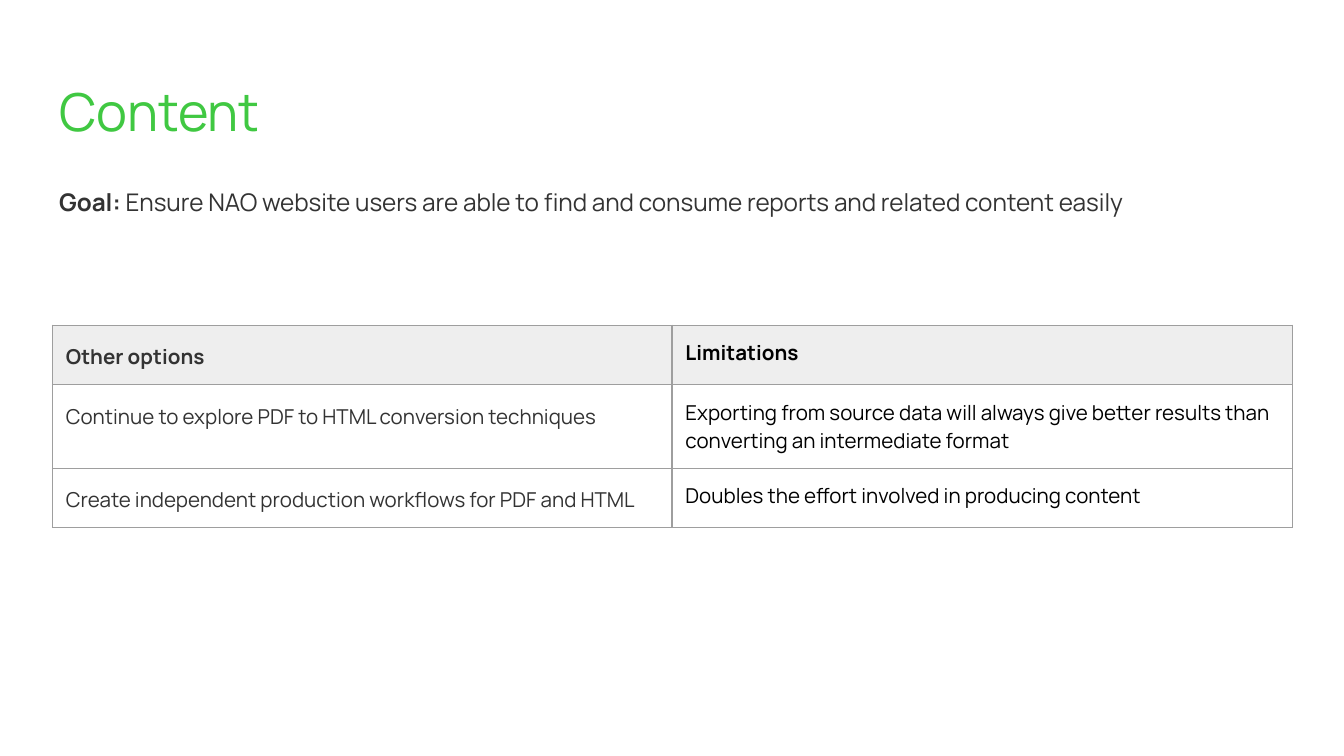
from dataclasses import dataclass

from lxml import etree
from pptx import Presentation
from pptx.dml.color import RGBColor
from pptx.enum.text import MSO_ANCHOR, MSO_AUTO_SIZE, PP_ALIGN
from pptx.oxml.ns import qn
from pptx.util import Inches, Pt

TOP = MSO_ANCHOR.TOP
LEFT = PP_ALIGN.LEFT
FIXED = MSO_AUTO_SIZE.NONE

FONT = "Manrope"
GREEN = RGBColor(0x40, 0xC8, 0x42)
DARK = RGBColor(0x33, 0x33, 0x33)
BLACK = RGBColor(0, 0, 0)
PALE = RGBColor(0xEE, 0xEE, 0xEE)
GREY = RGBColor(0x9E, 0x9E, 0x9E)
PAD = Inches(0.1)


@dataclass
class Row:
    option: str
    limit: str
    height: float


ROWS = [
    Row("Other options", "Limitations", 0.44),
    Row("Continue to explore PDF to HTML conversion techniques",
        "Exporting from source data will always give better results than "
        "converting an intermediate format", 0.62),
    Row("Create independent production workflows for PDF and HTML",
        "Doubles the effort involved in producing content", 0.44),
]
WIDTHS = (4.61, 4.62)


def style(run, size: float, color: RGBColor, bold: bool = False) -> None:
    font = run.font
    font.name, font.size, font.bold = FONT, Pt(size), bold
    font.color.rgb = color


def place(shape, top: float, height: float):
    """Move a placeholder and return its first paragraph."""
    shape.left, shape.top = Inches(0.34), Inches(top)
    shape.width, shape.height = Inches(9.32), Inches(height)
    frame = shape.text_frame
    frame.auto_size, frame.vertical_anchor = FIXED, TOP
    frame.margin_left = frame.margin_right = PAD
    frame.margin_top = frame.margin_bottom = PAD
    para = frame.paragraphs[0]
    para.alignment, para.space_before = LEFT, Pt(0)
    return para


def border(cell) -> None:
    props = cell._tc.get_or_add_tcPr()
    for index, side in enumerate(("lnL", "lnR", "lnT", "lnB")):
        line = etree.Element(qn(f"a:{side}"), w=str(Pt(0.75)))
        fill = etree.SubElement(line, qn("a:solidFill"))
        etree.SubElement(fill, qn("a:srgbClr"), val=str(GREY))
        props.insert(index, line)


def fill_cell(cell, text: str, head: bool, first: bool) -> None:
    cell.margin_left = cell.margin_right = PAD
    cell.margin_top = cell.margin_bottom = PAD
    cell.vertical_anchor = TOP
    if head:
        cell.fill.solid()
        cell.fill.fore_color.rgb = PALE
    else:
        cell.fill.background()
    border(cell)
    para = cell.text_frame.paragraphs[0]
    para.text = text
    if first:
        para.line_spacing, para.space_after = 1.15, Pt(16)
    style(para.runs[0], 11, DARK if first else BLACK, head)


def main() -> None:
    # Widescreen page, 16 to 9
    deck = Presentation()
    deck.slide_width = Inches(10)
    deck.slide_height = Inches(10 * 9 / 16)
    slide = deck.slides.add_slide(deck.slide_layouts[1])

    # Title
    para = place(slide.shapes.title, 0.49, 0.63)
    para.text = "Content"
    style(para.runs[0], 28, GREEN)

    # Goal
    para = place(slide.placeholders[1], 1.26, 3.74)
    props = para._p.get_or_add_pPr()
    props.set("marL", "0")
    props.set("indent", "0")
    etree.SubElement(props, qn("a:buNone"))
    para.line_spacing = 1.15
    goal = "Ensure NAO website users are able to find and consume reports and related content easily"
    for text, bold in (("Goal:", True), (f" {goal}", False)):
        run = para.add_run()
        run.text = text
        style(run, 13, DARK, bold)

    # Options table
    total = sum(row.height for row in ROWS)
    table = slide.shapes.add_table(
        len(ROWS), len(WIDTHS), Inches(0.39), Inches(2.42),
        Inches(sum(WIDTHS)), Inches(total)).table
    table.horz_banding = False
    for col, width in zip(table.columns, WIDTHS):
        col.width = Inches(width)
    for index, row in enumerate(ROWS):
        table.rows[index].height = Inches(row.height)
        for col, text in enumerate((row.option, row.limit)):
            fill_cell(table.cell(index, col), text, index == 0, col == 0)

    deck.save("out.pptx")


if __name__ == "__main__":
    main()
